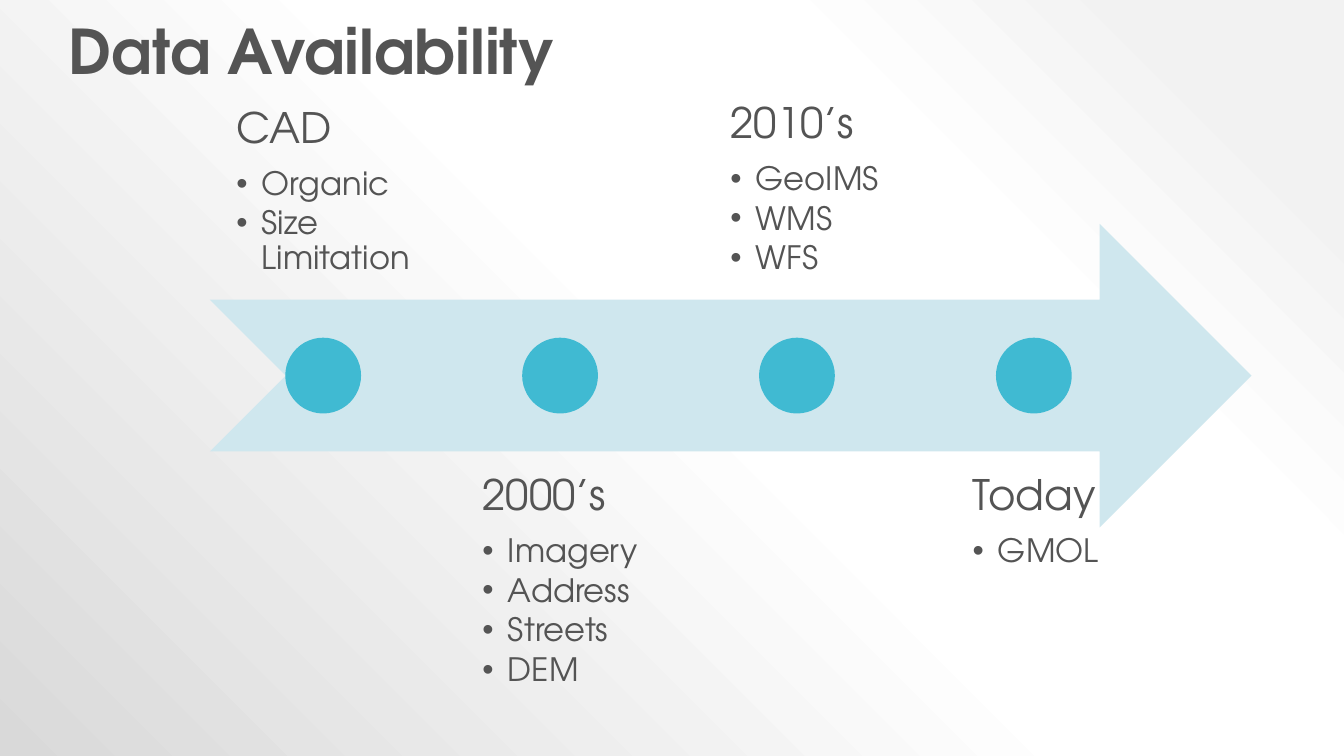
from pptx import Presentation
from pptx.dml.color import RGBColor
from pptx.enum.shapes import MSO_SHAPE
from pptx.enum.text import MSO_ANCHOR, MSO_AUTO_SIZE, PP_ALIGN
from pptx.oxml import parse_xml
from pptx.oxml.ns import nsdecls
from pptx.util import Cm, Pt

ARROW = MSO_SHAPE.NOTCHED_RIGHT_ARROW
CIRCLE = MSO_SHAPE.OVAL
TOP, BOTTOM = MSO_ANCHOR.TOP, MSO_ANCHOR.BOTTOM
LEFT = PP_ALIGN.LEFT
NO_FIT = MSO_AUTO_SIZE.NONE
TITLE_ONLY = 5

# Heading, left edge of the label in cm, items
PERIODS = [
    ("CAD", 5.38, ["Organic", "Size Limitation"]),
    ("2000’s", 11.58, ["Imagery", "Address", "Streets", "DEM"]),
    ("2010’s", 17.83, ["GeoIMS", "WMS", "WFS"]),
    ("Today", 23.93, ["GMOL"]),
]
BACKDROP = [(10, "F2F2F2"), (28, "FFFFFF"), (48, "FFFFFF"), (100, "D9D9D9")]

LABEL_WIDTH, LABEL_HEIGHT = 5.69, 7.55
ARROW_TOP, ARROW_HEIGHT = 5.64, 7.65
FIRST_DOT, DOT_STEP, DOT_SIZE = 7.19, 5.97, 1.91


def color(hex_string):
    return RGBColor.from_string(hex_string)


class Timeline:
    font = "TeX Gyre Adventor"
    ink, band, dot = "545454", "CFE7EE", "40BAD2"

    def __init__(self, deck):
        self.page = deck.slides.add_slide(deck.slide_layouts[TITLE_ONLY])

    def background(self, stops):
        """Fill the page with a gradient that starts at the top right corner."""
        stop_xml = "".join(
            f'<a:gs pos="{percent * 1000}"><a:srgbClr val="{tone}"/></a:gs>'
            for percent, tone in stops)
        self.page.element.cSld.insert(0, parse_xml(
            f'<p:bg {nsdecls("p", "a")}><p:bgPr><a:gradFill rotWithShape="1">'
            f'<a:gsLst>{stop_xml}</a:gsLst><a:path path="circle">'
            '<a:fillToRect l="100000" b="100000"/></a:path></a:gradFill>'
            '<a:effectLst/></p:bgPr></p:bg>'))

    def style(self, para, size, after=0, bold=False):
        para.alignment = LEFT
        para.line_spacing = 0.9
        para.space_before = Pt(0)
        para.space_after = Pt(after)
        para.font.name = self.font
        para.font.size = Pt(size)
        para.font.bold = bold
        para.font.color.rgb = color(self.ink)

    def title(self, text, left, top, width, height):
        box = self.page.shapes.title
        box.left, box.top = Cm(left), Cm(top)
        box.width, box.height = Cm(width), Cm(height)
        frame = box.text_frame
        frame.text = text
        frame.auto_size = NO_FIT
        frame.vertical_anchor = TOP
        self.style(frame.paragraphs[0], 44, bold=True)

    def shape(self, kind, fill, left, top, width, height):
        shape = self.page.shapes.add_shape(
            kind, Cm(left), Cm(top), Cm(width), Cm(height))
        shape.shadow.inherit = False
        shape.fill.solid()
        shape.fill.fore_color.rgb = color(fill)
        shape.line.fill.background()

    def bullet(self, para):
        properties = para._p.get_or_add_pPr()
        properties.set("marL", str(Cm(0.64)))
        properties.set("indent", str(-Cm(0.64)))
        for mark in ('buFont {} typeface="Arial"', 'buChar {} char="•"'):
            properties.append(parse_xml(f'<a:{mark.format(nsdecls("a"))}/>'))

    def label(self, heading, items, left, top, anchor):
        box = self.page.shapes.add_textbox(
            Cm(left), Cm(top), Cm(LABEL_WIDTH), Cm(LABEL_HEIGHT))
        frame = box.text_frame
        frame.word_wrap = True
        frame.vertical_anchor = anchor
        frame.margin_left = frame.margin_right = Cm(0.58)
        frame.margin_top = frame.margin_bottom = Cm(0.58)
        frame.text = heading
        self.style(frame.paragraphs[0], 30, after=10.5)
        for item in items:
            para = frame.add_paragraph()
            para.text = item
            para.level = 1
            self.style(para, 23, after=3.45)
            self.bullet(para)


def main():
    deck = Presentation()
    deck.slide_width, deck.slide_height = Cm(33.87), Cm(19.05)
    timeline = Timeline(deck)
    timeline.background(BACKDROP)
    timeline.title("Data Availability", 1.47, 0.41, 17.98, 1.96)
    timeline.shape(ARROW, timeline.band, 5.29, ARROW_TOP, 26.25, ARROW_HEIGHT)
    dot_top = ARROW_TOP + (ARROW_HEIGHT - DOT_SIZE) / 2
    for index, (heading, left, items) in enumerate(PERIODS):
        top, anchor = (11.38, TOP) if index % 2 else (0, BOTTOM)
        timeline.label(heading, items, left, top, anchor)
        timeline.shape(CIRCLE, timeline.dot, FIRST_DOT + index * DOT_STEP,
                       dot_top, DOT_SIZE, DOT_SIZE)
    deck.save("out.pptx")


if __name__ == "__main__":
    main()
